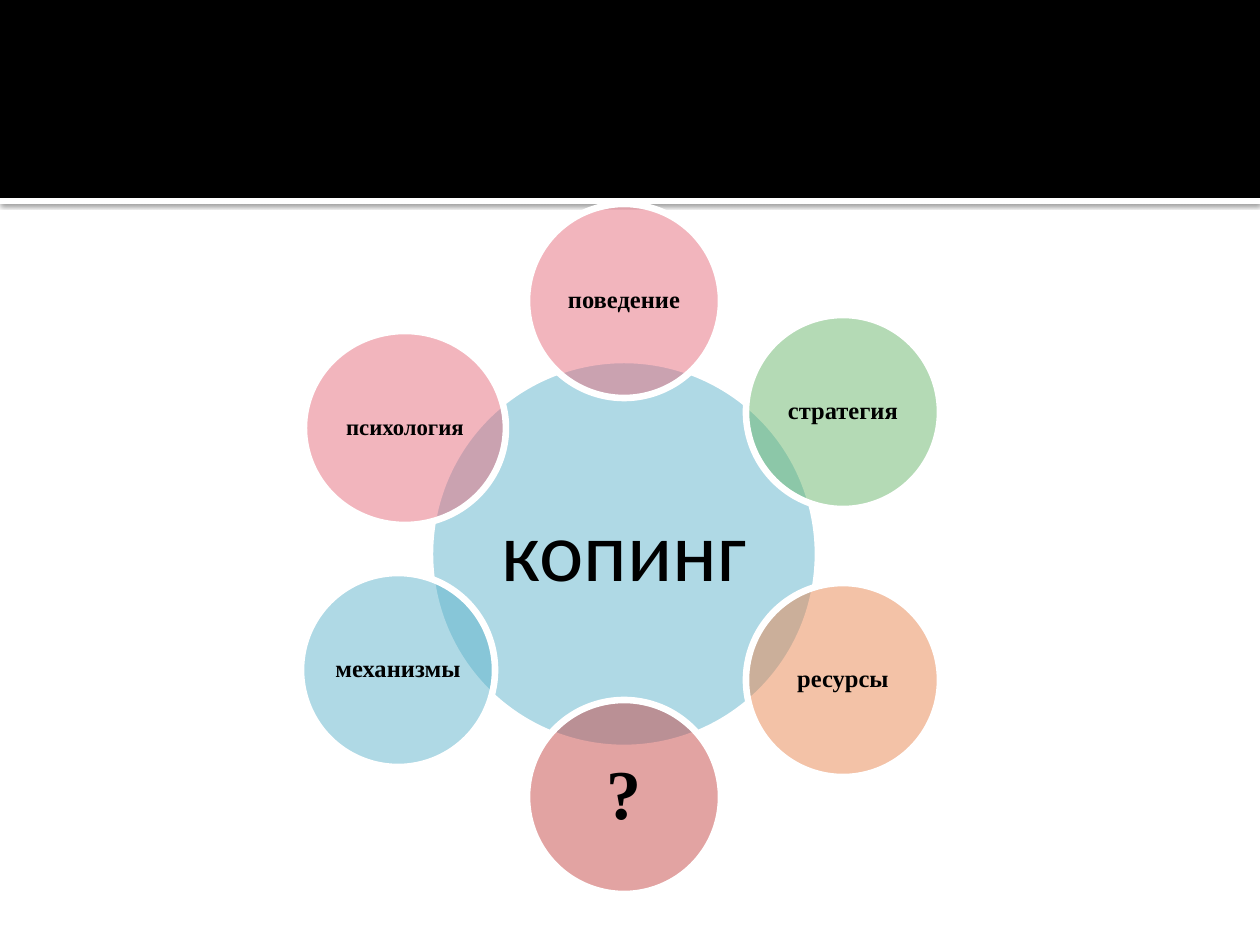
from lxml import etree
from pptx import Presentation
from pptx.dml.color import RGBColor
from pptx.enum.shapes import MSO_SHAPE
from pptx.enum.text import MSO_ANCHOR, PP_ALIGN
from pptx.oxml.ns import qn
from pptx.util import Pt

OVAL, RECTANGLE = MSO_SHAPE.OVAL, MSO_SHAPE.RECTANGLE
MIDDLE, CENTER = MSO_ANCHOR.MIDDLE, PP_ALIGN.CENTER
EMU_PER_PX = 914400 / 126
WIDTH, HEIGHT = 1260, 945
BANNER_HEIGHT, STRIPE_HEIGHT = 198, 6
HUB_SIZE, PETAL_SIZE, WIDE_PETAL = 388, 194, 202

HUB_FONT = {"name": "Calibri", "size": Pt(48), "bold": False}
PETAL_FONT = {"name": "Times New Roman", "size": Pt(14), "bold": True}
SMALL_FONT = {**PETAL_FONT, "size": Pt(13)}
MARK_FONT = {**PETAL_FONT, "size": Pt(40)}

# text, centre x, centre y, width, height, colour, font, inset
CIRCLES = [
    ("копинг", 624, 554, HUB_SIZE, HUB_SIZE, "60B5CC", HUB_FONT, 9),
    ("поведение", 624, 301, PETAL_SIZE, PETAL_SIZE, "E66C7D", PETAL_FONT, 2),
    ("стратегия", 843, 412, PETAL_SIZE, PETAL_SIZE, "6BB76D", PETAL_FONT, 2),
    ("ресурсы", 843, 680, PETAL_SIZE, PETAL_SIZE, "E88651", PETAL_FONT, 2),
    ("?", 624, 797, PETAL_SIZE, PETAL_SIZE, "C64847", MARK_FONT, 8),
    ("механизмы", 398, 670, PETAL_SIZE, PETAL_SIZE, "60B5CC", PETAL_FONT, 2),
    ("психология", 405, 428, WIDE_PETAL, PETAL_SIZE, "E66C7D", SMALL_FONT, 2),
]


def px(value):
    return round(value * EMU_PER_PX)


def color(value):
    return RGBColor.from_string(value)


def add_filled(slide, kind, left, top, width, height, fill):
    shape = slide.shapes.add_shape(kind, px(left), px(top), px(width), px(height))
    shape.shadow.inherit = False
    shape.fill.solid()
    shape.fill.fore_color.rgb = color(fill)
    shape.line.fill.background()
    return shape


def add_alpha(color_element, percent):
    etree.SubElement(color_element, qn("a:alpha"), val=str(percent * 1000))


def add_shadow(shape):
    effects = shape._element.spPr.find(qn("a:effectLst"))
    shadow = etree.SubElement(effects, qn("a:outerShdw"), blurRad=str(Pt(2.5)),
                              dist=str(Pt(0.8)), dir="5400000", rotWithShape="0")
    add_alpha(etree.SubElement(shadow, qn("a:srgbClr"), val="000000"), 60)


def add_circle(slide, text, x, y, width, height, fill, font, inset):
    shape = add_filled(slide, OVAL, x - width / 2, y - height / 2, width, height, fill)
    add_alpha(shape._element.spPr.find(qn("a:solidFill"))[0], 50)
    shape.line.color.rgb = color("FFFFFF")
    shape.line.width = Pt(3.78)
    frame = shape.text_frame
    frame.word_wrap = True
    frame.vertical_anchor = MIDDLE
    for side in ("left", "top", "right", "bottom"):
        setattr(frame, f"margin_{side}", px(inset))
    paragraph = frame.paragraphs[0]
    paragraph.alignment = CENTER
    paragraph.line_spacing = 0.9
    run = paragraph.add_run()
    run.text = text
    for name, value in font.items():
        setattr(run.font, name, value)
    run.font.color.rgb = color("000000")


def main():
    presentation = Presentation()
    presentation.slide_width, presentation.slide_height = px(WIDTH), px(HEIGHT)
    slide = presentation.slides.add_slide(presentation.slide_layouts[6])
    stripe = add_filled(slide, RECTANGLE, 0, BANNER_HEIGHT, WIDTH, STRIPE_HEIGHT, "FFFFFF")
    add_shadow(stripe)
    add_filled(slide, RECTANGLE, 0, 0, WIDTH, BANNER_HEIGHT, "000000")
    for circle in CIRCLES:
        add_circle(slide, *circle)
    presentation.save("out.pptx")


if __name__ == "__main__":
    main()
